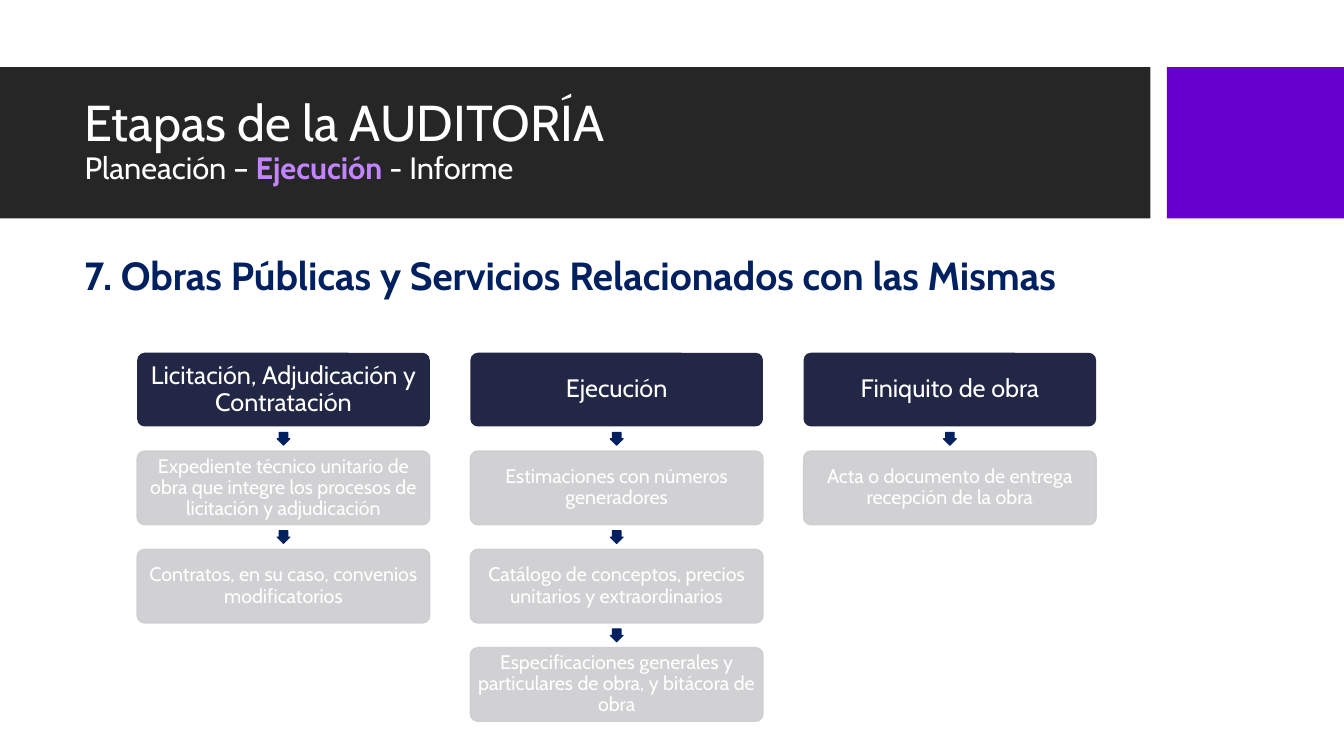
"""Build the slide on the stages of an audit of public works."""
from lxml import etree
from pptx import Presentation
from pptx.dml.color import RGBColor
from pptx.enum import shapes, text
from pptx.oxml.ns import qn
from pptx.util import Pt

NAVY, WHITE, GRAY = "002060", "FFFFFF", "CDCDCF"
LEFT, TOP, BOX_W, BOX_H = 98, 252, 209, 52.6
COL_STEP, ROW_STEP, ARROW = 238, 70.2, 9.2
COLUMNS = [
    ("Licitación, Adjudicación y Contratación",
     "Expediente técnico unitario de obra que integre los procesos de licitación y adjudicación",
     "Contratos, en su caso, convenios modificatorios"),
    ("Ejecución",
     "Estimaciones con números generadores",
     "Catálogo de conceptos, precios unitarios y extraordinarios",
     "Especificaciones generales y particulares de obra, y bitácora de obra"),
    ("Finiquito de obra",
     "Acta o documento de entrega recepción de la obra"),
]


def rgb(value):
    """Return the colour for a hex string."""
    return RGBColor.from_string(value)


def set_attrs(obj, **values):
    """Set each given attribute on an object."""
    for name, value in values.items():
        setattr(obj, name, value)


def place(sp, x, y, w, h):
    """Move and size a shape, in points."""
    set_attrs(sp, left=Pt(x), top=Pt(y), width=Pt(w), height=Pt(h))


def set_frame(sp, *insets):
    """Wrap and centre text vertically, with optional side and top insets."""
    tf = sp.text_frame
    set_attrs(tf, word_wrap=True, auto_size=text.MSO_AUTO_SIZE.NONE,
              vertical_anchor=text.MSO_ANCHOR.MIDDLE)
    if insets:
        side, top = map(Pt, insets)
        set_attrs(tf, margin_left=side, margin_right=side, margin_top=top, margin_bottom=top)
    return tf


def add_run(p, words, size, color=WHITE, bold=False):
    """Add a formatted run to a paragraph."""
    r = p.add_run()
    r.text = words
    set_attrs(r.font, name="Cabin", size=Pt(size), bold=bold)
    r.font.color.rgb = rgb(color)


def add_shape(s, kind, x, y, w, h, fill, line=None, weight=1):
    """Add a flat preset shape with a fill and an optional outline."""
    sp = s.shapes.add_shape(kind, Pt(x), Pt(y), Pt(w), Pt(h))
    sp.shadow.inherit = False
    sp.fill.solid()
    sp.fill.fore_color.rgb = rgb(fill)
    if line:
        sp.line.color.rgb = rgb(line)
        sp.line.width = Pt(weight)
    else:
        sp.line.fill.background()
    return sp


def set_alpha(sp, percent):
    """Make the fill and outline of a shape partly transparent."""
    for color in sp._element.spPr.iter(qn("a:srgbClr")):
        etree.SubElement(color, qn("a:alpha")).set("val", str(percent * 1000))


def add_box(s, x, y, words, header):
    """Add a rounded box, dark for a header and pale for a step."""
    fill, line, size, inset = ("212745", None, 18, 2.2) if header else (GRAY, GRAY, 14, 1.4)
    sp = add_shape(s, shapes.MSO_SHAPE.ROUNDED_RECTANGLE, x, y, BOX_W, BOX_H, fill, line)
    sp.adjustments[0] = 0.1
    if not header:
        set_alpha(sp, 90)
    p = set_frame(sp, inset, inset).paragraphs[0]
    set_attrs(p, alignment=text.PP_ALIGN.CENTER, line_spacing=0.9)
    add_run(p, words, size)


def add_arrow(s, x, y):
    """Add the small down arrow that leads to the box at the given place."""
    gap = ROW_STEP - BOX_H
    sp = add_shape(s, shapes.MSO_SHAPE.RIGHT_ARROW, x + (BOX_W - ARROW) / 2,
                   y - (gap + ARROW) / 2, ARROW, ARROW, NAVY, NAVY, 0.75)
    sp.rotation = 90
    sp.adjustments[0], sp.adjustments[1] = 0.667, 0.5


def add_column(s, x, labels):
    """Add a header box and the chain of steps under it."""
    for row, words in enumerate(labels):
        y = TOP + row * ROW_STEP
        if row:
            add_arrow(s, x, y)
        add_box(s, x, y, words, header=row == 0)


def format_title(s):
    """Place the title and write its two lines."""
    place(s.shapes.title, 53.3, 59, 756.7, 85)
    p = set_frame(s.shapes.title, 7.2, 3.6).paragraphs[0]
    set_attrs(p, alignment=text.PP_ALIGN.LEFT, line_spacing=0.9)
    add_run(p, "Etapas de la AUDITORÍA", 36)
    p.add_line_break()
    add_run(p, "Planeación – ", 22)
    add_run(p, "Ejecución", 22, "C285FF", True)
    add_run(p, " - Informe", 22)


def add_heading(s, words):
    """Add the section heading above the columns."""
    sp = s.shapes.add_textbox(Pt(53.3), Pt(163.4), Pt(773.3), Pt(70))
    p = set_frame(sp).paragraphs[0]
    p.line_spacing = 0.9
    add_run(p, words, 28, NAVY, True)


def main():
    """Build and save the slide."""
    prs = Presentation()
    set_attrs(prs, slide_width=Pt(960), slide_height=Pt(540))
    s = prs.slides.add_slide(prs.slide_layouts[5])
    for x, w, fill in ((0, 821.7, "262626"), (833.5, 126.5, "6600CC")):
        band = add_shape(s, shapes.MSO_SHAPE.RECTANGLE, x, 48, w, 108, fill)
        s.shapes.title._element.addprevious(band._element)
    format_title(s)
    add_heading(s, "7. Obras Públicas y Servicios Relacionados con las Mismas")
    for col, labels in enumerate(COLUMNS):
        add_column(s, LEFT + col * COL_STEP, labels)
    prs.save("out.pptx")


if __name__ == "__main__":
    main()
